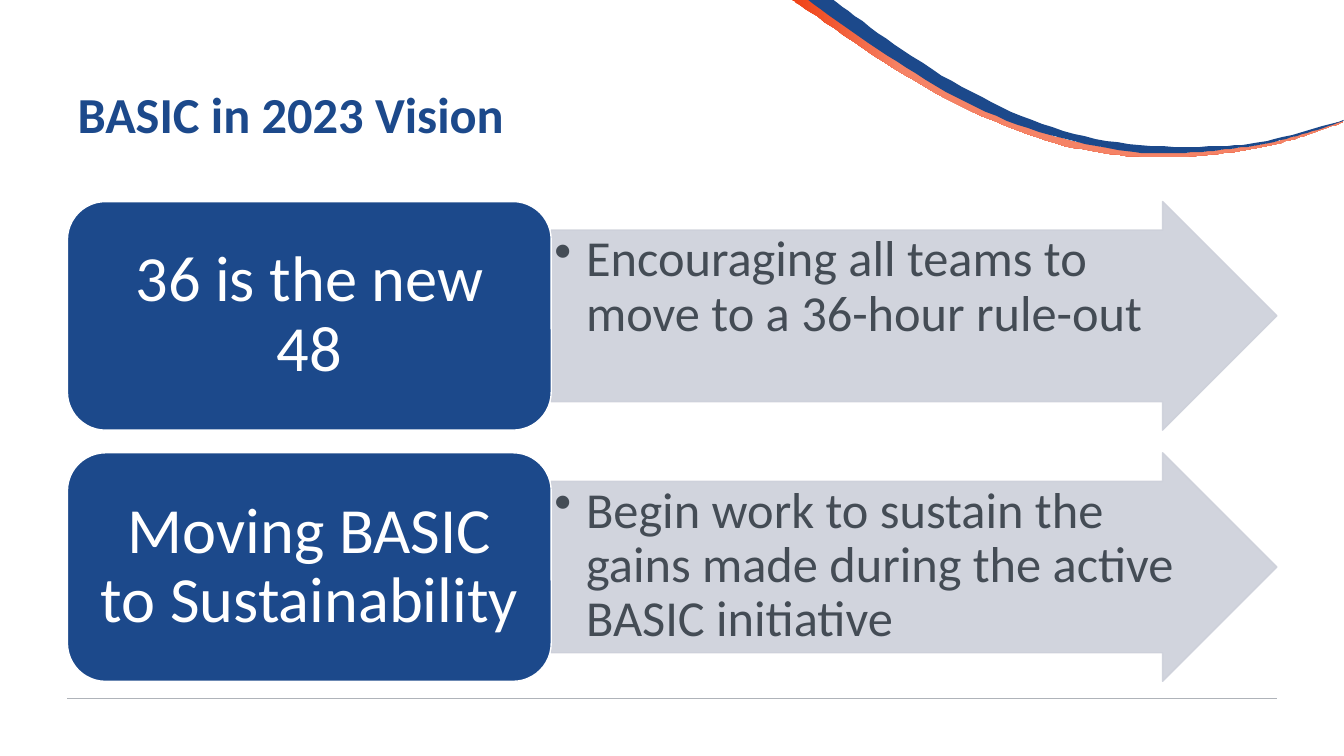
import pptx
import pptx.util
import pptx.dml.color
import pptx.enum.shapes
import pptx.enum.text
import pptx.oxml
import pptx.oxml.ns

Cm, Pt = pptx.util.Cm, pptx.util.Pt
Kind = pptx.enum.shapes.MSO_SHAPE
Align = pptx.enum.text.PP_ALIGN
Anchor = pptx.enum.text.MSO_ANCHOR
qn = pptx.oxml.ns.qn
NS = pptx.oxml.ns.nsdecls("a")

HUES = {"blue": "1C498B", "red": "F04115", "coral": "F58366", "pale": "CDD0DA",
        "rule": "AFB3B9", "ink": "444C55", "white": "FFFFFF"}

# Knots of the two swoosh bands, in hundredths of an inch: upper edge, lower edge
CORAL = ([(805, 0), (882, 54), (958, 99), (1039, 133), (1081, 144), (1125, 150),
          (1168, 152), (1212, 149), (1256, 143), (1293, 133), (1333, 120)],
         [(1333, 121), (1294, 135), (1256, 145), (1213, 152), (1169, 156), (1124, 155),
          (1080, 149), (1037, 139), (955, 106), (878, 62), (804, 12), (786, 0)])
BLUE = ([(827, 0), (879, 38), (954, 86), (1034, 123), (1120, 143), (1209, 145),
         (1264, 138), (1333, 119)],
        [(1333, 120), (1297, 132), (1253, 143), (1209, 149), (1164, 152), (1119, 150),
         (1031, 131), (948, 96), (871, 49), (802, 0)])

ROWS = [("36 is the new 48", "Encouraging all teams to move to a 36-hour rule-out"),
        ("Moving BASIC to Sustainability",
         "Begin work to sustain the gains made during the active BASIC initiative")]


def tint(name):
    return pptx.dml.color.RGBColor.from_string(HUES[name])


def smooth(knots, steps=8):
    """Return points on a Catmull-Rom curve through the knots."""
    ends = [knots[0], *knots, knots[-1]]
    dots = []
    for a, b, c, d in zip(ends, ends[1:], ends[2:], ends[3:]):
        for n in range(steps):
            t = n / steps
            dots.append(tuple(
                (2 * q + (r - p) * t + (2 * p - 5 * q + 4 * r - s) * t ** 2
                 + (3 * q - p - 3 * r + s) * t ** 3) / 2
                for p, q, r, s in zip(a, b, c, d)))
    return dots + [knots[-1]]


def add_band(slide, edges):
    dots = smooth(edges[0]) + smooth(edges[1])
    pen = slide.shapes.build_freeform(*dots[0], scale=Cm(2.54) / 100)
    pen.add_line_segments(dots[1:], close=True)
    band = pen.convert_to_shape()
    band.shadow.inherit = False
    band.line.fill.background()
    return band


def add_swoosh(slide):
    fill = add_band(slide, CORAL).fill
    fill.gradient()
    fill.gradient_angle = 0
    for stop, name, place in zip(fill.gradient_stops, ("red", "coral"), (0, 0.2)):
        stop.color.rgb = tint(name)
        stop.position = place
    fill = add_band(slide, BLUE).fill
    fill.solid()
    fill.fore_color.rgb = tint("blue")


def add_rule(slide, x, y, wide):
    rule = slide.shapes.add_connector(
        pptx.enum.shapes.MSO_CONNECTOR.STRAIGHT, Cm(x), Cm(y), Cm(x + wide), Cm(y))
    rule.line.color.rgb = tint("rule")
    rule.line.width = Pt(0.5)
    rule._element.spPr.append(pptx.oxml.parse_xml(f"<a:effectLst {NS}/>"))


def write(para, text, size, name, bold=False):
    run = para.add_run()
    run.text = text
    run.font.name = "Calibri"
    run.font.size = Pt(size)
    run.font.bold = bold
    run.font.color.rgb = tint(name)


def add_title(slide, x, y, wide, high):
    title = slide.shapes.title
    title.left, title.top, title.width, title.height = map(Cm, (x, y, wide, high))
    title.text_frame.vertical_anchor = Anchor.MIDDLE
    para = title.text_frame.paragraphs[0]
    para.alignment = Align.LEFT
    write(para, "BASIC in 2023 Vision", 36, "blue", True)


def add_block(slide, kind, box, fill, edge, pads, anchor, align):
    """Draw a filled shape and return it with its first paragraph."""
    block = slide.shapes.add_shape(kind, *map(Cm, box))
    block.shadow.inherit = False
    block.fill.solid()
    block.fill.fore_color.rgb = tint(fill)
    block.line.color.rgb = tint(edge)
    block.line.width = Pt(1)
    frame = block.text_frame
    frame.word_wrap = True
    frame.margin_left = frame.margin_right = Cm(pads[0])
    frame.margin_top = frame.margin_bottom = Cm(pads[1])
    frame.vertical_anchor = anchor
    para = frame.paragraphs[0]
    para.alignment = align
    para.line_spacing = 0.9
    return block, para


def add_row(slide, x, y, wide, high, head, note):
    split = wide * 0.4
    arrow, para = add_block(slide, Kind.RIGHT_ARROW, (x + split, y, wide - split, high),
                            "pale", "pale", (0.08, 0.08), Anchor.TOP, Align.LEFT)
    arrow.adjustments[0] = 0.75
    arrow.adjustments[1] = 0.5
    for hue in arrow._element.spPr.iter(qn("a:srgbClr")):
        hue.append(pptx.oxml.parse_xml(f'<a:alpha {NS} val="90000"/>'))
    props = para._p.get_or_add_pPr()
    props.set("marL", str(Cm(0.8)))
    props.set("indent", str(-Cm(0.8)))
    props.append(pptx.oxml.parse_xml(f'<a:buChar {NS} char="•"/>'))
    write(para, note, 36, "ink")

    para = add_block(slide, Kind.ROUNDED_RECTANGLE, (x, y, split, high), "blue", "white",
                     (0.48, 0.25), Anchor.MIDDLE, Align.CENTER)[1]
    write(para, head, 46, "white")


def main():
    deck = pptx.Presentation()
    deck.slide_width, deck.slide_height = Cm(33.87), Cm(19.05)
    slide = deck.slides.add_slide(deck.slide_layouts[5])
    left, wide = 1.7, 30.48
    add_swoosh(slide)
    add_rule(slide, left, 17.6, wide)
    add_title(slide, left, 1.02, wide, 3.68)
    for n, (head, note) in enumerate(ROWS):
        add_row(slide, left, 5.08 + n * 6.33, wide, 5.76, head, note)
    deck.save("out.pptx")


if __name__ == "__main__":
    main()
